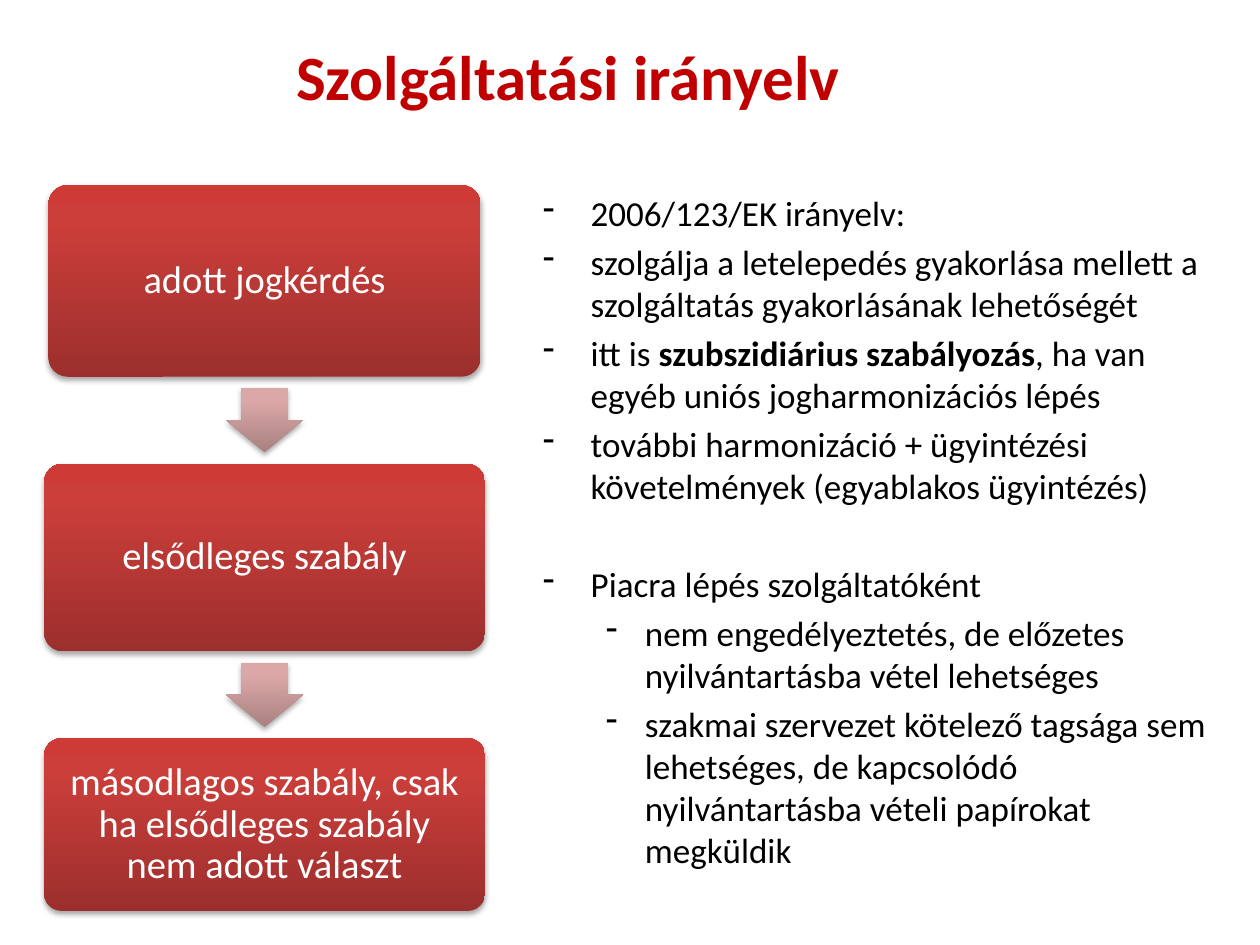
from pptx import Presentation
from pptx.dml.color import RGBColor
from pptx.enum.shapes import MSO_SHAPE
from pptx.enum.text import MSO_ANCHOR, PP_ALIGN
from pptx.oxml import parse_xml
from pptx.oxml.ns import nsdecls
from pptx.util import Inches, Pt

TITLE = "Szolgáltatási irányelv"
STEPS = [
    ("adott jogkérdés", 3.43, 1.52),
    ("elsődleges szabály", 3.5, 1.49),
    ("másodlagos szabály, csak ha elsődleges szabály nem adott választ", 3.5, 1.37),
]
POINTS = [
    (0, 4, ["2006/123/EK irányelv:"]),
    (0, 4, ["szolgálja a letelepedés gyakorlása mellett a szolgáltatás gyakorlásának lehetőségét"]),
    (0, 4, ["itt is ", "szubszidiárius szabályozás", ", ha van egyéb uniós jogharmonizációs lépés"]),
    (0, 4, ["további harmonizáció + ügyintézési követelmények (egyablakos ügyintézés)"]),
    (0, 32, ["Piacra lépés szolgáltatóként"]),
    (1, 4, ["nem engedélyeztetés, de előzetes nyilvántartásba vétel lehetséges"]),
    (1, 4, ["szakmai szervezet kötelező tagsága sem lehetséges, de kapcsolódó "
            "nyilvántartásba vételi papírokat megküldik"]),
]
BOLD_TEXT = "szubszidiárius szabályozás"
INDENTS = [(0.38, -0.38), (0.81, -0.31)]

FONT = "Calibri"
RED = RGBColor(0xC0, 0x00, 0x00)
BLACK = RGBColor(0x00, 0x00, 0x00)
WHITE = RGBColor(0xFF, 0xFF, 0xFF)
BOX_STOPS = [(0, RGBColor(0x9C, 0x2F, 0x2D)), (80, RGBColor(0xCB, 0x3E, 0x3A)),
             (100, RGBColor(0xCE, 0x3B, 0x37))]
ARROW_STOPS = [(0, RGBColor(0xA9, 0x81, 0x80)), (80, RGBColor(0xDB, 0xA7, 0xA7)),
               (100, RGBColor(0xDD, 0xA7, 0xA6))]

FLOW_CENTER, FLOW_TOP, FLOW_GAP = 2.1, 1.47, 0.69
ARROW_W, ARROW_H = 0.61, 0.51


def style_run(r, size, color, bold=False):
    r.font.name = FONT
    r.font.size = Pt(size)
    r.font.color.rgb = color
    r.font.bold = bold


def add_flow_shape(s, kind, top, width, height, adjustments, stops):
    sp = s.shapes.add_shape(kind, Inches(FLOW_CENTER - width / 2), Inches(top),
                            Inches(width), Inches(height))
    for i, value in enumerate(adjustments):
        sp.adjustments[i] = value
    sp.line.fill.background()
    gs = "".join(f'<a:gs pos="{pos * 1000}"><a:srgbClr val="{color}"/></a:gs>'
                 for pos, color in stops)
    spPr = sp.element.spPr
    spPr.insert(2, parse_xml(
        f'<a:gradFill {nsdecls("a")} rotWithShape="1"><a:gsLst>{gs}</a:gsLst>'
        '<a:lin ang="16200000" scaled="0"/></a:gradFill>'))
    spPr.append(parse_xml(
        f'<a:effectLst {nsdecls("a")}><a:outerShdw blurRad="40000" dist="23000" '
        'dir="5400000" rotWithShape="0"><a:srgbClr val="000000">'
        '<a:alpha val="35000"/></a:srgbClr></a:outerShdw></a:effectLst>'))
    return sp


def add_title(s):
    sp = s.shapes.title
    sp.left, sp.top, sp.width, sp.height = map(Inches, (2.25, 0.29, 7.57, 1.28))
    tf = sp.text_frame
    tf.text = TITLE
    tf.vertical_anchor = MSO_ANCHOR.TOP
    tf.margin_top = Inches(0.01)
    p = tf.paragraphs[0]
    p.alignment = PP_ALIGN.LEFT
    style_run(p.runs[0], 36, RED, True)


def add_points(s):
    sp = s.shapes.add_textbox(Inches(4.21), Inches(1.47), Inches(5.59), Inches(5.9))
    tf = sp.text_frame
    tf.word_wrap = True
    for i, (level, before, texts) in enumerate(POINTS):
        p = tf.paragraphs[0] if i == 0 else tf.add_paragraph()
        p.level = level
        p.space_before = Pt(before)
        margin, indent = INDENTS[level]
        pPr = p._p.get_or_add_pPr()
        pPr.set("marL", str(Inches(margin)))
        pPr.set("indent", str(Inches(indent)))
        pPr.append(parse_xml(f'<a:buChar {nsdecls("a")} char="-"/>'))
        for text in texts:
            r = p.add_run()
            r.text = text
            style_run(r, 20, BLACK, text == BOLD_TEXT)


def add_flow(s):
    top = FLOW_TOP
    for i, (text, width, height) in enumerate(STEPS):
        if i:
            add_flow_shape(s, MSO_SHAPE.DOWN_ARROW, top - (FLOW_GAP + ARROW_H) / 2,
                           ARROW_W, ARROW_H, (0.6, 0.5), ARROW_STOPS)
        sp = add_flow_shape(s, MSO_SHAPE.ROUNDED_RECTANGLE, top, width, height,
                            (0.1,), BOX_STOPS)
        tf = sp.text_frame
        tf.text = text
        tf.word_wrap = True
        tf.vertical_anchor = MSO_ANCHOR.MIDDLE
        tf.margin_left = tf.margin_right = tf.margin_top = tf.margin_bottom = Inches(0.09)
        p = tf.paragraphs[0]
        p.alignment = PP_ALIGN.CENTER
        p.line_spacing = 0.9
        style_run(p.runs[0], 22, WHITE)
        top += height + FLOW_GAP


def main():
    prs = Presentation()
    prs.slide_width, prs.slide_height = Inches(10), Inches(7.5)
    s = prs.slides.add_slide(prs.slide_layouts[5])
    add_title(s)
    add_points(s)
    add_flow(s)
    prs.save("out.pptx")


if __name__ == "__main__":
    main()
